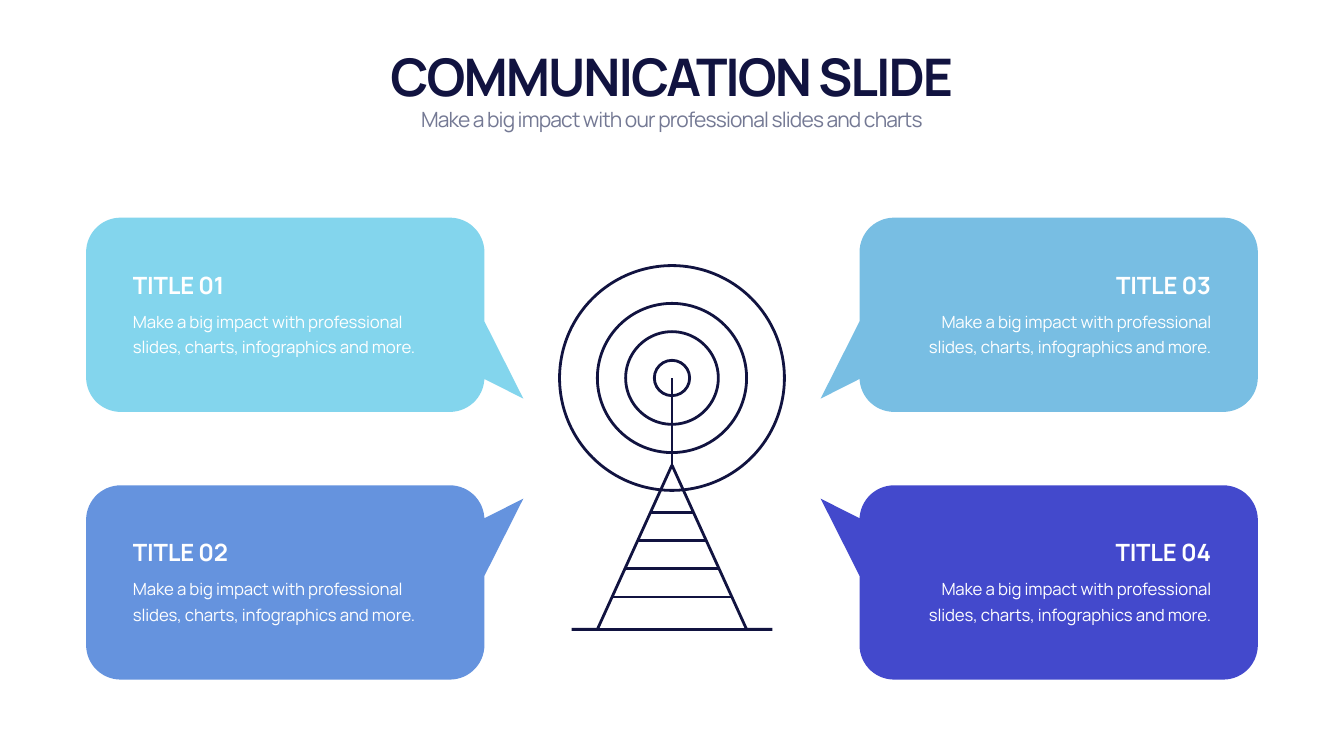
from math import cos, radians, sin

from lxml import etree
from pptx import Presentation
from pptx.dml.color import RGBColor
from pptx.enum.shapes import MSO_CONNECTOR, MSO_SHAPE
from pptx.enum.text import MSO_ANCHOR, MSO_AUTO_SIZE, PP_ALIGN
from pptx.oxml.ns import qn
from pptx.util import Cm, Pt

STRAIGHT = MSO_CONNECTOR.STRAIGHT
OVAL = MSO_SHAPE.OVAL
TOP, BOTTOM = MSO_ANCHOR.TOP, MSO_ANCHOR.BOTTOM
LEFT, CENTER, RIGHT = PP_ALIGN.LEFT, PP_ALIGN.CENTER, PP_ALIGN.RIGHT
GROW = MSO_AUTO_SIZE.SHAPE_TO_FIT_TEXT

SLIDE_WIDTH, SLIDE_HEIGHT = 67.72, 38.1
MIDDLE = SLIDE_WIDTH / 2
NAVY, GREY, WHITE = "111340", "747994", "FFFFFF"

BUBBLE_LEFT, BUBBLE_TOP, BUBBLE_BOTTOM = 4.34, 10.97, 34.25
BUBBLE_WIDTH, BUBBLE_HEIGHT, CORNER = 20.07, 9.79, 1.74
TAIL = [(20.07, 5.23), (22.03, 9.12), (20.07, 8.13)]

TEXT_LEFT, TEXT_WIDTH = 6.45, 16.03
TITLE_TOP, BODY_TOP, ROW_PITCH = 13.49, 15.32, 13.49
BODY = "Make a big impact with professional slides, charts, infographics and more."
MESSAGES = [
    ("TITLE 01", "83D5ED", 0, 0),
    ("TITLE 02", "6593DE", 0, 1),
    ("TITLE 03", "78BEE3", 1, 0),
    ("TITLE 04", "4349CC", 1, 1),
]

SIGNAL_Y, APEX_Y, GROUND_Y = 19.05, 23.44, 31.72
RINGS = [1.78, 4.67, 7.52, 11.33]
LEG_SPREAD, FOOT_SPREAD = 3.76, 5.06
FIRST_RUNG, RUNG_GAP, RUNG_COUNT = 25.83, 1.42, 4


def rgb(value):
    return RGBColor.from_string(value)


def arc(x, y, start):
    angles = [radians(start + step) for step in range(0, 91, 6)]
    return [(x + CORNER * cos(a), y + CORNER * sin(a)) for a in angles]


def bubble_outline():
    right, bottom = BUBBLE_WIDTH - CORNER, BUBBLE_HEIGHT - CORNER
    return (arc(CORNER, CORNER, 180) + arc(right, CORNER, 270) + TAIL
            + arc(right, bottom, 0) + arc(CORNER, bottom, 90))


class Deck:
    font = "Manrope"
    ink = NAVY
    stroke = 4

    def __init__(self):
        self.presentation = Presentation()
        self.presentation.slide_width = Cm(SLIDE_WIDTH)
        self.presentation.slide_height = Cm(SLIDE_HEIGHT)
        self.slide = self.presentation.slides.add_slide(
            self.presentation.slide_layouts[6])
        self.canvas = self.slide.shapes

    def draw_line(self, line):
        line.color.rgb = rgb(self.ink)
        line.width = Pt(self.stroke)

    def ring(self, x, y, diameter):
        ring = self.canvas.add_shape(
            OVAL, Cm(x - diameter / 2), Cm(y - diameter / 2),
            Cm(diameter), Cm(diameter))
        ring.shadow.inherit = False
        ring.fill.background()
        self.draw_line(ring.line)

    def line(self, x1, y1, x2, y2):
        line = self.canvas.add_connector(
            STRAIGHT, Cm(x1), Cm(y1), Cm(x2), Cm(y2))
        self.draw_line(line.line)
        etree.SubElement(line._element.spPr, qn("a:effectLst"))

    def outline(self, points, fill=None):
        corners = [(Cm(x), Cm(y)) for x, y in points]
        builder = self.canvas.build_freeform(*corners[0])
        builder.add_line_segments(corners[1:], close=fill is not None)
        outline = builder.convert_to_shape()
        outline.shadow.inherit = False
        if fill:
            outline.fill.solid()
            outline.fill.fore_color.rgb = rgb(fill)
            outline.line.fill.background()
        else:
            outline.fill.background()
            self.draw_line(outline.line)

    def text(self, words, x, y, width, height, size, color, spacing,
             align=LEFT, anchor=TOP, bold=False, leading=None):
        box = self.canvas.add_textbox(Cm(x), Cm(y), Cm(width), Cm(height))
        frame = box.text_frame
        frame.word_wrap = True
        frame.auto_size = GROW
        frame.vertical_anchor = anchor
        paragraph = frame.paragraphs[0]
        paragraph.alignment = align
        if leading:
            paragraph.line_spacing = Pt(leading)
        run = paragraph.add_run()
        run.text = words
        run._r.get_or_add_rPr().set("spc", str(round(spacing * 100)))
        font = paragraph.font
        font.name = self.font
        font.size = Pt(size)
        font.bold = bold
        font.color.rgb = rgb(color)


def add_tower(deck):
    deck.canvas = deck.slide.shapes.add_group_shape().shapes
    for diameter in RINGS:
        deck.ring(MIDDLE, SIGNAL_Y, diameter)
    deck.line(MIDDLE, SIGNAL_Y, MIDDLE, APEX_Y)
    for side in (-1, 1):
        deck.outline([(MIDDLE + side * FOOT_SPREAD, GROUND_Y),
                      (MIDDLE + side * LEG_SPREAD, GROUND_Y),
                      (MIDDLE, APEX_Y)])
    for index in range(RUNG_COUNT):
        y = FIRST_RUNG + index * RUNG_GAP
        half = LEG_SPREAD * (y - APEX_Y) / (GROUND_Y - APEX_Y)
        deck.line(MIDDLE - half, y, MIDDLE + half, y)
    deck.line(29.74, GROUND_Y, 38.2, GROUND_Y)
    deck.canvas = deck.slide.shapes


def add_bubble(deck, color, column, row):
    points = []
    for u, v in bubble_outline():
        x = BUBBLE_LEFT + u
        points.append((SLIDE_WIDTH - x if column else x,
                       BUBBLE_BOTTOM - v if row else BUBBLE_TOP + v))
    deck.outline(points, color)


def add_message(deck, title, column, row):
    x = SLIDE_WIDTH - TEXT_LEFT - TEXT_WIDTH if column else TEXT_LEFT
    align = RIGHT if column else LEFT
    shift = row * ROW_PITCH
    deck.text(title, x, TITLE_TOP + shift, TEXT_WIDTH, 1.7, 34, WHITE, -0.3,
              align, BOTTOM, bold=True)
    deck.text(BODY, x, BODY_TOP + shift, TEXT_WIDTH, 2.77, 24, WHITE, -0.2,
              align, leading=36)


def main():
    deck = Deck()
    add_tower(deck)
    for title, color, column, row in MESSAGES:
        add_bubble(deck, color, column, row)
    deck.text("COMMUNICATION SLIDE", 4.22, 2.08, 59.26, 3.43, 74, NAVY, -2.9,
              CENTER, BOTTOM, bold=True)
    deck.text("Make a big impact with our professional slides and charts",
              4.22, 5.26, 59.26, 1.55, 30, GREY, -1.2, CENTER)
    for title, color, column, row in MESSAGES:
        add_message(deck, title, column, row)
    deck.presentation.save("out.pptx")


if __name__ == "__main__":
    main()
